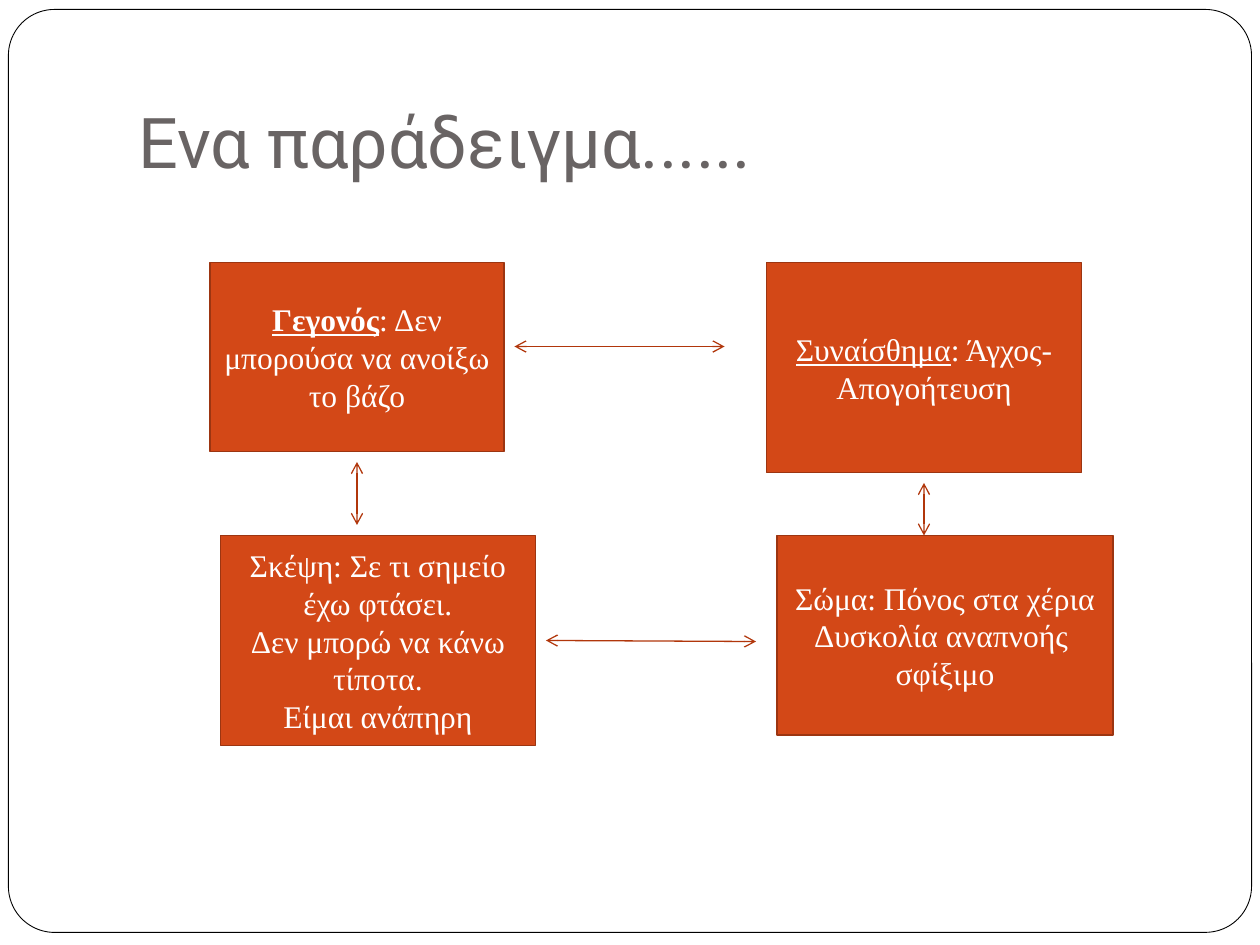
"""Build a slide of four linked boxes: event, emotion, thought and body."""
from typing import NamedTuple

from lxml import etree
from pptx import Presentation
from pptx import util as u
from pptx.dml.color import RGBColor
from pptx.enum import shapes, text
from pptx.oxml.ns import qn

PX = 7620
COLORS = {
    "paper": "FFFFFF", "frame": "000000", "title": "696464",
    "box": "D34817", "edge": "9C3511", "arrow": "B1360B", "label": "FFFFFF",
}
TITLE_FONT = {"name": "Roboto", "size": u.Pt(40)}
BOX_FONT = {"name": "Times New Roman", "size": u.Pt(18)}
UNDERLINED = {"underline": True}
HEADING = {"bold": True, "underline": True}
TITLE_FRAME = {
    "word_wrap": True, "vertical_anchor": text.MSO_ANCHOR.BOTTOM,
    "margin_left": u.Inches(0.1), "margin_right": u.Inches(0.1),
    "margin_top": u.Inches(0.05), "margin_bottom": u.Inches(0.1),
}
BOX_FRAME = {"word_wrap": True, "vertical_anchor": text.MSO_ANCHOR.MIDDLE}


class Run(NamedTuple):
    text: str
    style: dict = {}


class Box(NamedTuple):
    x: int
    y: int
    w: int
    h: int
    paragraphs: list[list[Run]]


class Arrow(NamedTuple):
    x1: int
    y1: int
    x2: int
    y2: int


BOXES = [
    Box(200, 250, 280, 180,
        [[Run("Γεγονός", HEADING), Run(": Δεν μπορούσα να ανοίξω το βάζο")]]),
    Box(730, 250, 300, 200,
        [[Run("Συναίσθημα", UNDERLINED), Run(": Άγχος- Απογοήτευση")]]),
    Box(210, 510, 300, 200,
        [[Run("Σκέψη: Σε τι σημείο έχω φτάσει.")],
         [Run("Δεν μπορώ να κάνω τίποτα.")],
         [Run("Είμαι ανάπηρη")]]),
    Box(740, 510, 320, 190,
        [[Run("Σώμα: Πόνος στα χέρια")],
         [Run("Δυσκολία αναπνοής ")],
         [Run("σφίξιμο")]]),
]
ARROWS = [
    Arrow(490, 330, 690, 330),
    Arrow(340, 440, 340, 500),
    Arrow(880, 460, 880, 510),
    Arrow(520, 610, 720, 611),
]


def px(*values: int) -> list[u.Emu]:
    return [u.Emu(v * PX) for v in values]


def rgb(name: str) -> RGBColor:
    return RGBColor.from_string(COLORS[name])


def apply(target, values: dict) -> None:
    for name, value in values.items():
        setattr(target, name, value)


def add_run(p, run: Run, font: dict, color: str) -> None:
    r = p.add_run()
    r.text = run.text
    apply(r.font, font | run.style)
    r.font.color.rgb = rgb(color)


def add_panel(s, kind, bounds: tuple, fill: str, line: str, width: float):
    sp = s.shapes.add_shape(kind, *px(*bounds))
    sp.shadow.inherit = False
    sp.fill.solid()
    sp.fill.fore_color.rgb = rgb(fill)
    sp.line.color.rgb = rgb(line)
    sp.line.width = u.Pt(width)
    return sp


def add_title(s, wording: str) -> None:
    tf = s.shapes.add_textbox(*px(120, 36, 1020, 150)).text_frame
    apply(tf, TITLE_FRAME)
    add_run(tf.paragraphs[0], Run(wording), TITLE_FONT, "title")


def add_box(s, box: Box) -> None:
    sp = add_panel(s, shapes.MSO_SHAPE.RECTANGLE, box[:4], "box", "edge", 1)
    tf = sp.text_frame
    apply(tf, BOX_FRAME)
    for i, runs in enumerate(box.paragraphs):
        p = tf.add_paragraph() if i else tf.paragraphs[0]
        p.alignment = text.PP_ALIGN.CENTER
        for run in runs:
            add_run(p, run, BOX_FONT, "label")


def add_arrow(s, arrow: Arrow) -> None:
    c = s.shapes.add_connector(shapes.MSO_CONNECTOR.STRAIGHT, *px(*arrow))
    c.line.color.rgb = rgb("arrow")
    c.line.width = u.Pt(0.75)
    ln = c.line._get_or_add_ln()
    for end in ("a:headEnd", "a:tailEnd"):
        etree.SubElement(ln, qn(end), type="arrow")
    etree.SubElement(c._element.spPr, qn("a:effectLst"))


def main() -> None:
    prs = Presentation()
    prs.slide_width, prs.slide_height = px(1200, 900)
    s = prs.slides.add_slide(prs.slide_layouts[6])
    frame = add_panel(s, shapes.MSO_SHAPE.ROUNDED_RECTANGLE,
                      (8, 9, 1184, 879), "paper", "frame", 0.5)
    frame.adjustments[0] = 0.05
    add_title(s, "Ενα παράδειγμα......")
    for box in BOXES:
        add_box(s, box)
    for arrow in ARROWS:
        add_arrow(s, arrow)
    prs.save("out.pptx")


if __name__ == "__main__":
    main()
